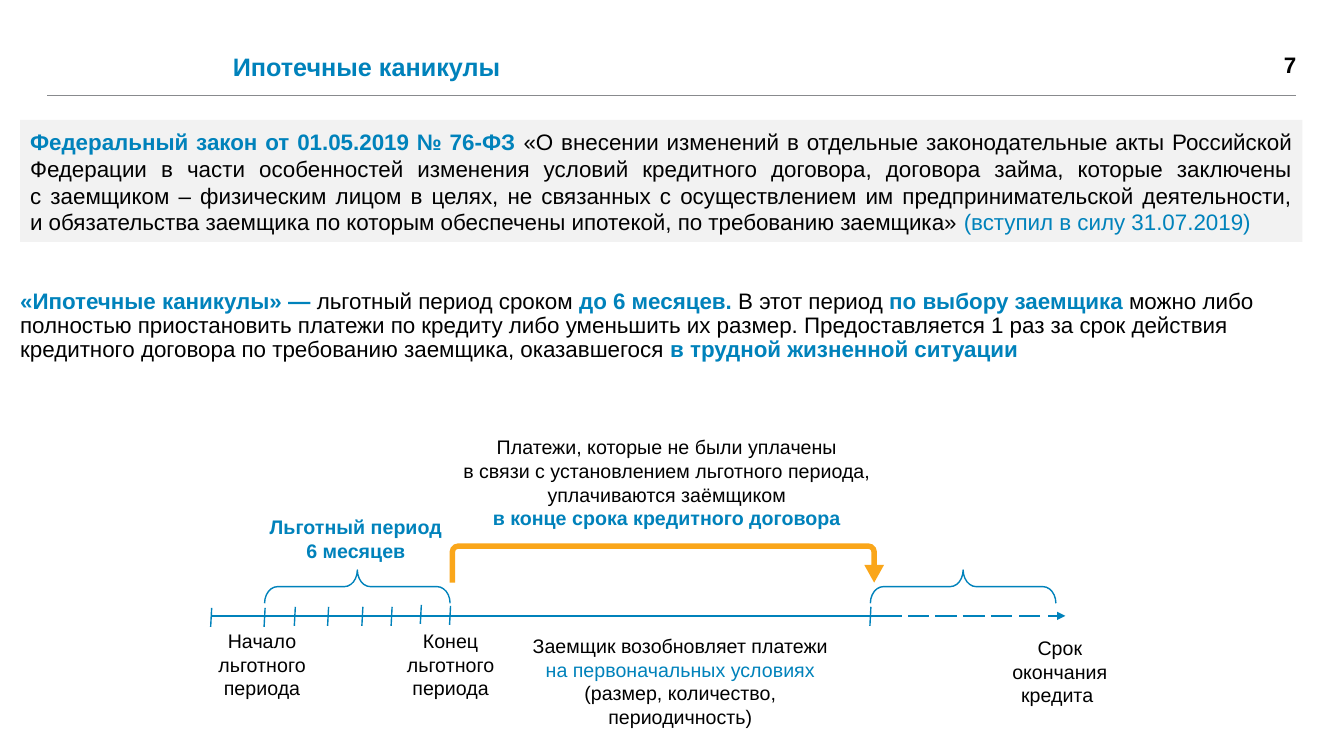
from lxml.etree import SubElement
from pptx import Presentation
from pptx.dml.color import RGBColor
from pptx.enum.shapes import MSO_CONNECTOR, MSO_SHAPE
from pptx.enum.text import MSO_ANCHOR, PP_ALIGN
from pptx.oxml.ns import qn
from pptx.util import Inches, Pt

COLORS = {
    "blue": "0082BB",
    "black": "000000",
    "rule": "888A8D",
    "panel": "F2F2F2",
    "orange": "FAA61A",
}
FONT = "Arial"
CELL = 0.1  # side of a grid cell in inches


def cells(*counts):
    return [Inches(count * CELL) for count in counts]


def color(name):
    return RGBColor.from_string(COLORS[name])


class SlideBuilder:
    """Draws styled elements on one slide; places are given in grid cells."""

    def __init__(self, deck):
        self.page = deck.slides.add_slide(deck.slide_layouts[5])

    def fill_frame(self, frame, paragraphs, size, align, inset, anchor, spacing=None):
        """Write paragraphs, each a list of (text, color, bold) spans."""
        frame.word_wrap = True
        frame.vertical_anchor = anchor
        if not inset:
            frame.margin_left = frame.margin_right = 0
            frame.margin_top = frame.margin_bottom = 0
        for index, spans in enumerate(paragraphs):
            para = frame.add_paragraph() if index else frame.paragraphs[0]
            para.alignment = align
            para.line_spacing = spacing
            para.font.name = FONT
            para.font.size = Pt(size)
            for text, tone, bold in spans:
                for number, line in enumerate(text.split("\n")):
                    if number:
                        para.add_line_break()
                    if line:
                        span = para.add_run()
                        span.text = line
                        span.font.name = FONT
                        span.font.size = Pt(size)
                        span.font.bold = bold
                        span.font.color.rgb = color(tone)

    def title(self, text, place):
        box = self.page.shapes.title
        box.left, box.top, box.width, box.height = cells(*place)
        self.fill_frame(box.text_frame, [[(text, "blue", True)]], 18,
                        PP_ALIGN.LEFT, True, MSO_ANCHOR.TOP)

    def text(self, paragraphs, place, size=14, align=PP_ALIGN.CENTER,
             inset=True, anchor=MSO_ANCHOR.TOP, spacing=None):
        box = self.page.shapes.add_textbox(*cells(*place))
        self.fill_frame(box.text_frame, paragraphs, size, align, inset, anchor, spacing)

    def shape(self, kind, place, fill=None, line=None, adjustments=(), rotation=0):
        shape = self.page.shapes.add_shape(kind, *cells(*place))
        shape.shadow.inherit = False
        shape.rotation = rotation
        for index, value in enumerate(adjustments):
            shape.adjustments[index] = value
        if fill:
            shape.fill.solid()
            shape.fill.fore_color.rgb = color(fill)
        else:
            shape.fill.background()
        if line:
            shape.line.color.rgb = color(line)
            shape.line.width = Pt(1)
        else:
            shape.line.fill.background()

    def line(self, start, end, tone="blue", width=1, arrow=False):
        line = self.page.shapes.add_connector(
            MSO_CONNECTOR.STRAIGHT, *cells(*start, *end))
        line.line.color.rgb = color(tone)
        line.line.width = Pt(width)
        if arrow:
            SubElement(line.line._get_or_add_ln(), qn("a:tailEnd"), type="triangle")
        SubElement(line._element.spPr, qn("a:effectLst"))


def add_heading(slide):
    slide.title("Ипотечные каникулы", (22.1, 4.6, 92.3, 3.5))
    slide.line((4.7, 9.5), (128.6, 9.5), "rule", 0.5)
    slide.text([[("7", "black", True)]], (120.5, 4.7, 8.1, 3.5), 16,
               PP_ALIGN.RIGHT, inset=False, anchor=MSO_ANCHOR.MIDDLE)


def add_law(slide):
    slide.shape(MSO_SHAPE.RECTANGLE, (2, 11.9, 127.2, 12.1), fill="panel")
    slide.text([[
        ("Федеральный закон от 01.05.2019 № 76-ФЗ ", "blue", True),
        ("«О внесении изменений в отдельные законодательные акты Российской "
         "Федерации в части особенностей изменения условий кредитного договора, "
         "договора займа, которые заключены\n"
         "с заемщиком – физическим лицом в целях, не связанных с осуществлением "
         "им предпринимательской деятельности,\n"
         "и обязательства заемщика по которым обеспечены ипотекой, "
         "по требованию заемщика» ", "black", False),
        ("(вступил в силу 31.07.2019)", "blue", False),
    ]], (2, 12.2, 127.2, 11.8), 16, PP_ALIGN.JUSTIFY)


def add_definition(slide):
    slide.text([[
        ("«Ипотечные каникулы» —", "blue", True),
        (" льготный период сроком ", "black", False),
        ("до 6 месяцев. ", "blue", True),
        ("В этот период ", "black", False),
        ("по выбору заемщика ", "blue", True),
        ("можно либо полностью приостановить платежи по кредиту либо уменьшить "
         "их размер. Предоставляется 1 раз за срок действия кредитного договора "
         "по требованию заемщика, оказавшегося ", "black", False),
        ("в трудной жизненной ситуации", "blue", True),
    ]], (2, 28.8, 130.1, 13.9), 16, PP_ALIGN.LEFT, inset=False, spacing=0.9)


def add_timeline(slide):
    axis, loan_end = 61.1, 86.4
    slide.line((21, axis), (loan_end, axis))
    dashes = [(86.4, 89.5), (90.1, 92.2), (92.8, 94.9), (95.5, 97.7),
              (98.3, 100.4), (101.1, 103.2), (104, 105.7)]
    for dash in dashes:
        start, end = dash
        slide.line((start, axis), (end, axis), arrow=dash == dashes[-1])

    ticks = [(21, 60.3), (26.3, 60.3), (29.3, 60.2), (32.6, 60.2), (36, 60.2),
             (38.9, 60.2), (41.8, 60), (44.7, 60.1), (loan_end, 60.2)]
    for column, row in ticks:
        slide.line((column, row), (column - 0.1, row + 1.9))

    for column in (33.8, 93.9):
        slide.shape(MSO_SHAPE.LEFT_BRACE, (column, 49, 3.3, 18.4), line="blue",
                    adjustments=(0.392, 0.5), rotation=90)
    slide.shape(MSO_SHAPE.U_TURN_ARROW, (44.6, 53.9, 43.1, 3.9), fill="orange",
                adjustments=(0.143, 0.25, 0.45, 0.217, 1))


def add_captions(slide):
    slide.text([[("Льготный период", "blue", True)], [("6 месяцев", "blue", True)]],
               (25.4, 50.6, 19.8, 5.7))
    slide.text([[
        ("Платежи, которые не были уплачены\n"
         "в связи с установлением льготного периода,\n"
         "уплачиваются заёмщиком\n", "black", False),
        ("в конце срока кредитного договора", "blue", True),
    ]], (31.4, 42.7, 69.5, 10.4))
    slide.text([[
        ("Заемщик возобновляет платежи\n", "black", False),
        ("на первоначальных условиях", "blue", False),
        (" (размер, количество, периодичность)", "black", False),
    ]], (51.2, 62.4, 32.6, 10.4))
    for text, place in [
        ("Начало льготного периода", (19.5, 61.9, 13, 8.1)),
        ("Конец льготного периода", (38.2, 61.9, 13, 8.1)),
        ("Срок окончания кредита ", (98.3, 62.6, 13.7, 8.1)),
    ]:
        slide.text([[(text, "black", False)]], place)


def main():
    deck = Presentation()
    deck.slide_width, deck.slide_height = cells(133.33, 75)
    slide = SlideBuilder(deck)
    for add_part in (add_heading, add_law, add_definition, add_timeline, add_captions):
        add_part(slide)
    deck.save("out.pptx")


if __name__ == "__main__":
    main()
